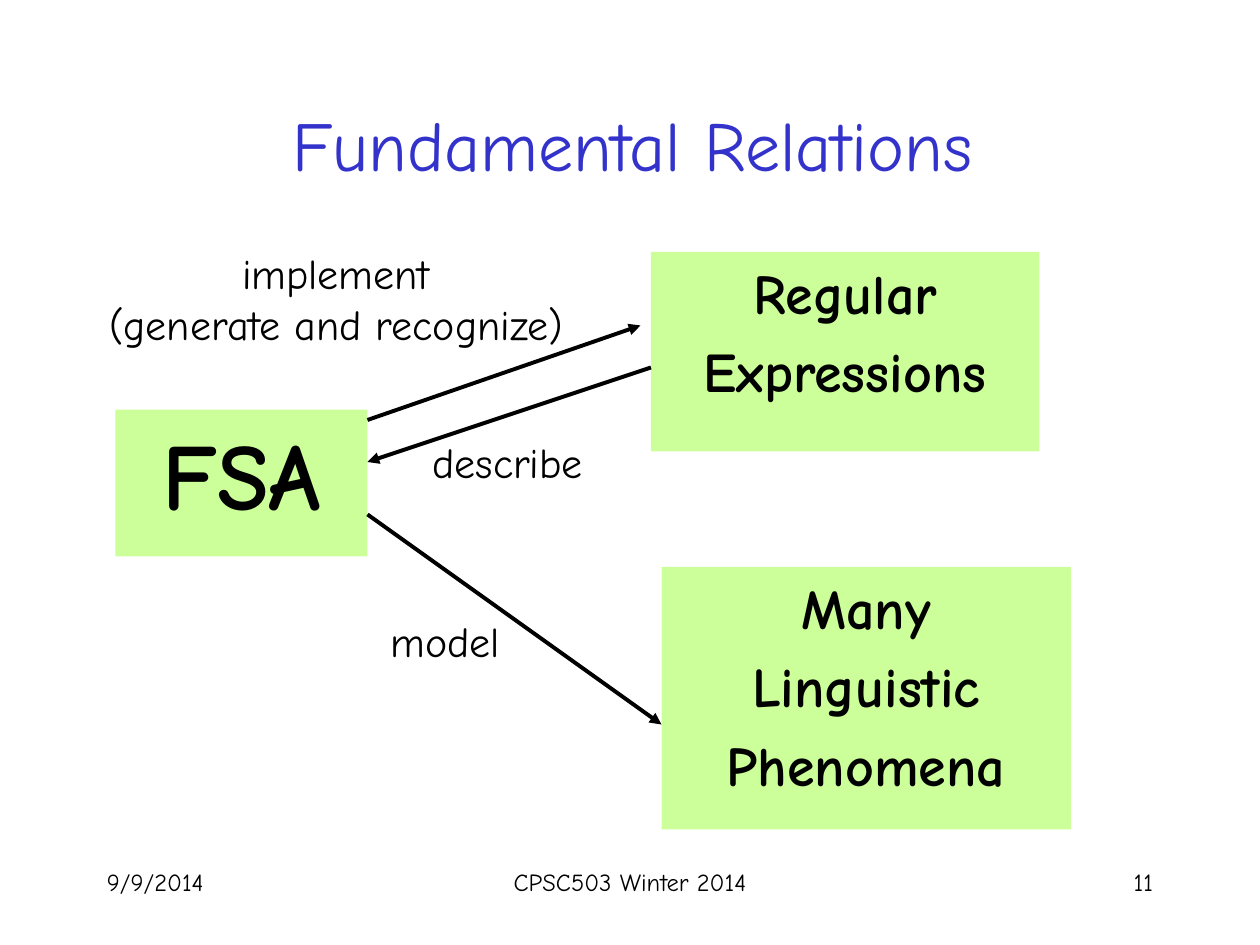
from dataclasses import dataclass

from lxml.etree import SubElement
from pptx import Presentation
from pptx.dml.color import RGBColor
from pptx.enum.shapes import MSO_CONNECTOR as CONN, MSO_SHAPE as SHAPE
from pptx.enum.text import MSO_ANCHOR as ANCHOR, MSO_AUTO_SIZE as AUTO, PP_ALIGN as ALIGN
from pptx.oxml.ns import qn
from pptx.util import Emu, Pt

PX = 9525
FONT = "Comic Neue"
COLORS = {"text": "000000", "title": "3333CC", "box": "CCFF99"}
INDENT = 36


@dataclass
class Label:
    text: str
    x: int
    y: int
    w: int
    h: int
    size: int = 24
    align: ALIGN = ALIGN.LEFT
    color: str = "text"
    anchor: ANCHOR = ANCHOR.TOP
    grow: bool = False


@dataclass
class Box:
    text: str
    x: int
    y: int
    w: int
    h: int
    size: int = 32


@dataclass
class Arrow:
    x1: int
    y1: int
    x2: int
    y2: int


LABELS = [
    Label("9/9/2014", 72, 656, 200, 48, 14),
    Label("CPSC503 Winter 2014", 328, 656, 304, 48, 14, ALIGN.CENTER),
    Label("11", 688, 656, 200, 48, 14, ALIGN.RIGHT),
    Label("Fundamental Relations", 74, 49, 816, 120, 40, ALIGN.CENTER, "title", ANCHOR.MIDDLE),
    Label("model", 288, 464, 122, 48, grow=True),
    Label("implement\n(generate and recognize)", 48, 184, 416, 86, align=ALIGN.CENTER, grow=True),
    Label("describe", 320, 328, 176, 48, grow=True),
]
BOXES = [
    Box("FSA", 88, 312, 192, 112, 54),
    Box("Regular\nExpressions", 496, 192, 296, 152),
    Box("Many\nLinguistic\nPhenomena", 504, 432, 312, 200),
]
ARROWS = [
    Arrow(280, 320, 488, 248),
    Arrow(496, 280, 280, 352),
    Arrow(280, 392, 504, 552),
]


def px(*values: int) -> list[Emu]:
    return [Emu(v * PX) for v in values]


def rgb(name: str) -> RGBColor:
    return RGBColor.from_string(COLORS[name])


def write(tf, text: str, size: int, align: ALIGN, color: str = "text", bold: bool = False) -> None:
    tf.word_wrap = True
    tf.text = text
    for p in tf.paragraphs:
        p.alignment = align
        for r in p.runs:
            r.font.name = FONT
            r.font.size = Pt(size)
            r.font.bold = bold
            r.font.color.rgb = rgb(color)


def add_label(s, label: Label) -> None:
    tf = s.shapes.add_textbox(*px(label.x, label.y, label.w, label.h)).text_frame
    write(tf, label.text, label.size, label.align, label.color)
    tf.vertical_anchor = label.anchor
    if label.grow:
        tf.auto_size = AUTO.SHAPE_TO_FIT_TEXT


def add_box(s, box: Box) -> None:
    sp = s.shapes.add_shape(SHAPE.RECTANGLE, *px(box.x, box.y, box.w, box.h))
    sp.shadow.inherit = False
    sp.fill.solid()
    sp.fill.fore_color.rgb = rgb("box")
    sp.line.fill.background()
    tf = sp.text_frame
    tf.vertical_anchor = ANCHOR.TOP
    write(tf, box.text, box.size, ALIGN.CENTER, bold=True)
    for p in tf.paragraphs:
        pPr = p._p.get_or_add_pPr()
        pPr.set("marL", str(INDENT * PX))
        pPr.set("indent", str(-INDENT * PX))
        SubElement(SubElement(pPr, qn("a:spcBef")), qn("a:spcPct"), val="20000")


def add_arrow(s, arrow: Arrow) -> None:
    line = s.shapes.add_connector(CONN.STRAIGHT, *px(arrow.x1, arrow.y1, arrow.x2, arrow.y2))
    line.line.color.rgb = rgb("text")
    line.line.width = Pt(2.25)
    SubElement(line.line._get_or_add_ln(), qn("a:tailEnd"), type="triangle")
    SubElement(line._element.spPr, qn("a:effectLst"))


def main() -> None:
    prs = Presentation()
    prs.slide_width, prs.slide_height = px(960, 720)
    s = prs.slides.add_slide(prs.slide_layouts[6])
    for box in BOXES:
        add_box(s, box)
    for arrow in ARROWS:
        add_arrow(s, arrow)
    for label in LABELS:
        add_label(s, label)
    prs.save("out.pptx")


if __name__ == "__main__":
    main()
